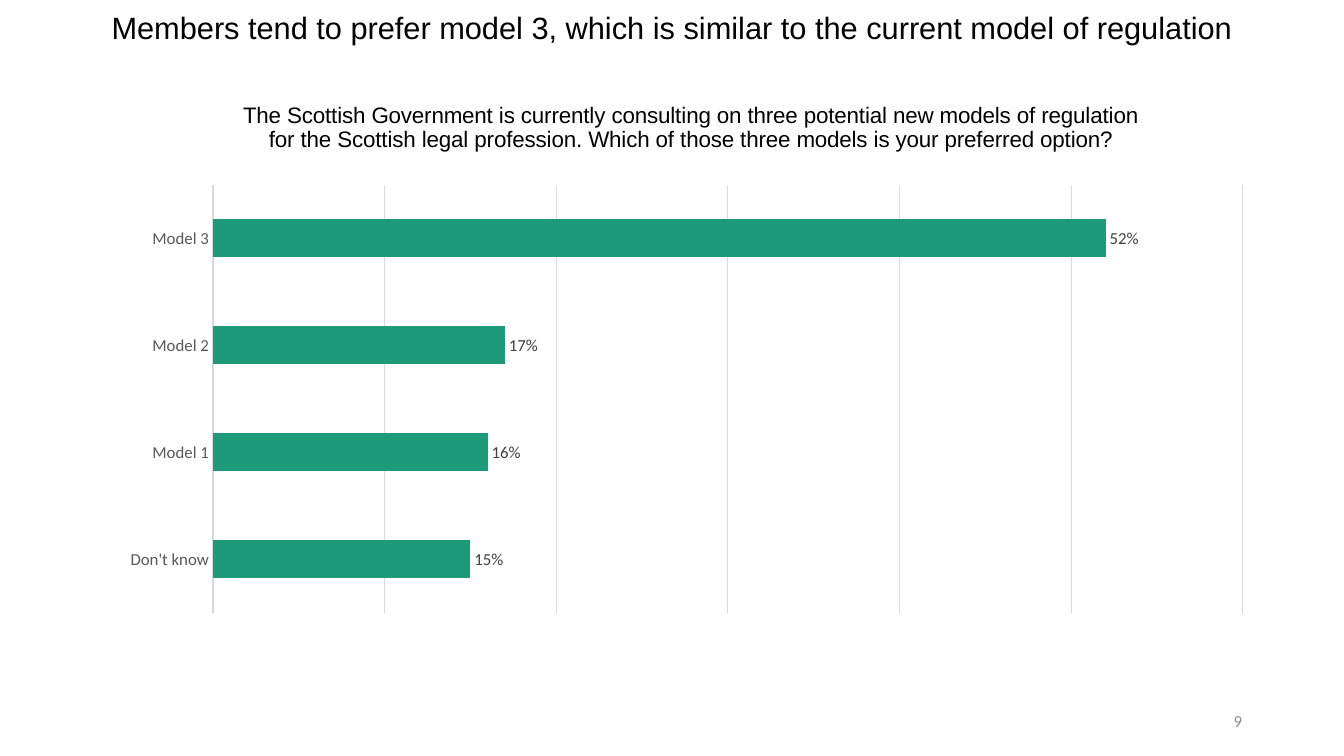
from lxml import etree
from pptx import Presentation
from pptx.chart.data import CategoryChartData
from pptx.dml.color import RGBColor
from pptx.enum.chart import XL_CHART_TYPE as ChartType, XL_LABEL_POSITION as LabelPosition
from pptx.enum.chart import XL_TICK_MARK as TickMark
from pptx.enum.text import MSO_ANCHOR as Anchor, PP_ALIGN as Align
from pptx.oxml.ns import qn
from pptx.util import Pt

# Content
HEADLINE = "Members tend to prefer model 3, which is similar to the current model of regulation"
QUESTION = (
    "The Scottish Government is currently consulting on three potential new models of regulation "
    "for the Scottish legal profession. Which of those three models is your preferred option?"
)
PAGE_NUMBER = "9"
ANSWERS = [("Don't know", 0.15), ("Model 1", 0.16), ("Model 2", 0.17), ("Model 3", 0.52)]

COLORS = {
    "text": "000000", "bar": "1D9A78", "grid": "D9D9D9",
    "axis": "595959", "label": "404040", "page": "8C8C8C",
}

# Geometry in px: left, top, width, height
SLIDE_SIZE = (1344, 756)
HEADLINE_BOX = (0, 0, 1344, 60)
CHART_BOX = (108, 75, 1159, 549)
PLOT_BOX = (213, 185, 1030, 428)
QUESTION_CORNER = (239, 97)
PAGE_BOX = (950, 701, 302, 40)
EMU_PER_PX = 914400 / 100.8


def emu(*lengths):
    return [round(length * EMU_PER_PX) for length in lengths]


def color(name):
    return RGBColor.from_string(COLORS[name])


def set_font(font, size, color_name, name="Calibri"):
    font.name, font.size, font.bold = name, Pt(size), False
    font.color.rgb = color(color_name)


def set_line(line, color_name):
    line.color.rgb = color(color_name)
    line.width = Pt(0.75)


def add_text(slide, text, box, *, size, color_name, font="Calibri", align=Align.LEFT, spacing=1.0):
    frame = slide.shapes.add_textbox(*emu(*box)).text_frame
    frame.word_wrap = True
    frame.vertical_anchor = Anchor.MIDDLE
    paragraph = frame.paragraphs[0]
    paragraph.alignment = align
    paragraph.line_spacing = spacing
    run = paragraph.add_run()
    run.text = text
    set_font(run.font, size, color_name, font)


def place(layout, settings):
    """Fill a chart layout element with fixed positions."""
    for child in list(layout):
        layout.remove(child)
    manual = etree.SubElement(layout, qn("c:manualLayout"))
    for tag, value in settings:
        etree.SubElement(manual, qn("c:" + tag)).set("val", str(value))


def chart_share(left, top):
    return [
        ("xMode", "edge"), ("yMode", "edge"),
        ("x", round((left - CHART_BOX[0]) / CHART_BOX[2], 4)),
        ("y", round((top - CHART_BOX[1]) / CHART_BOX[3], 4)),
    ]


def add_answer_chart(slide):
    data = CategoryChartData(number_format="0%")
    data.categories = [answer for answer, _ in ANSWERS]
    data.add_series("Series 1", [share for _, share in ANSWERS])
    chart = slide.shapes.add_chart(ChartType.BAR_CLUSTERED, *emu(*CHART_BOX), data).chart
    set_font(chart.font, 10, "text")
    chart.has_legend = False

    # Question above the bars
    chart.has_title = True
    paragraph = chart.chart_title.text_frame.paragraphs[0]
    set_font(paragraph.font, 16, "text", "Arial")
    run = paragraph.add_run()
    run.text = QUESTION
    set_font(run.font, 16, "text", "Arial")
    chart.chart_title.include_in_layout = False

    # Axes
    categories, values = chart.category_axis, chart.value_axis
    categories.major_tick_mark = categories.minor_tick_mark = TickMark.NONE
    set_font(categories.tick_labels.font, 12, "axis")
    set_line(categories.format.line, "grid")
    values.minimum_scale, values.maximum_scale, values.major_unit = 0, 0.6, 0.1
    values.has_major_gridlines = True
    set_line(values.major_gridlines.format.line, "grid")
    values.visible = False

    # Bars and their labels
    plot = chart.plots[0]
    plot.gap_width = 182
    plot.vary_by_categories = False
    series = plot.series[0]
    series.format.fill.solid()
    series.format.fill.fore_color.rgb = color("bar")
    labels = series.data_labels
    labels.show_value = True
    labels.position = LabelPosition.OUTSIDE_END
    labels.number_format, labels.number_format_is_linked = "0%", False
    set_font(labels.font, 12, "label")

    # Fixed places for question and plot
    title = chart.chart_title._element
    place(title.get_or_add_layout() if hasattr(title, "get_or_add_layout") else title.find(qn("c:layout")),
          chart_share(*QUESTION_CORNER))
    area = chart._chartSpace.find(".//" + qn("c:plotArea"))
    layout = area.find(qn("c:layout"))
    if layout is None:
        layout = etree.Element(qn("c:layout"))
        area.insert(0, layout)
    left, top, width, height = PLOT_BOX
    place(layout, [("layoutTarget", "inner")] + chart_share(left, top) + [
        ("w", round(width / CHART_BOX[2], 4)), ("h", round(height / CHART_BOX[3], 4)),
    ])


def main():
    presentation = Presentation()
    presentation.slide_width, presentation.slide_height = emu(*SLIDE_SIZE)
    slide = presentation.slides.add_slide(presentation.slide_layouts[6])
    add_text(slide, HEADLINE, HEADLINE_BOX, size=22, color_name="text", font="Arial",
             align=Align.CENTER, spacing=0.9)
    add_answer_chart(slide)
    add_text(slide, PAGE_NUMBER, PAGE_BOX, size=12, color_name="page", align=Align.RIGHT)
    presentation.save("out.pptx")


if __name__ == "__main__":
    main()
